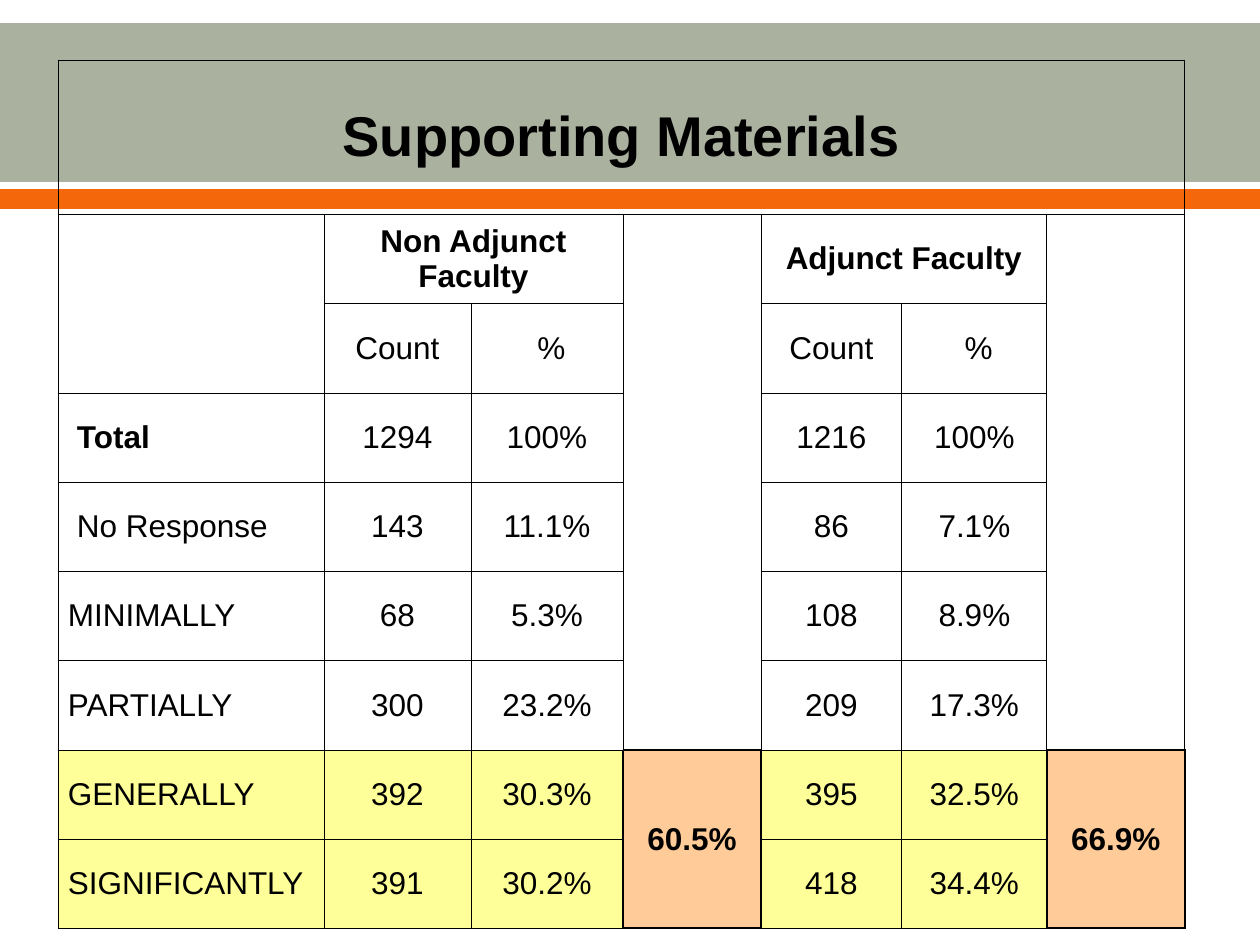
from lxml.etree import SubElement as Sub
from pptx import Presentation
from pptx.dml.color import RGBColor as RGB
from pptx.enum.shapes import MSO_SHAPE as Shape
from pptx.enum.text import MSO_ANCHOR as Anchor, PP_ALIGN as Align
from pptx.oxml.ns import qn
from pptx.util import Pt

SCALE = 914400 / 126  # EMU in one px
SAGE = RGB(0xAB, 0xB1, 0x9F)
ORANGE = RGB(0xF4, 0x68, 0x0B)
YELLOW = RGB(0xFF, 0xFF, 0x99)
PEACH = RGB(0xFF, 0xCC, 0x99)
BLACK = RGB(0, 0, 0)

COLS = [266, 147, 152, 138, 141, 145, 138]
ROWS = [154] + [89, 90, 89, 89] * 2
GAPS = (3, 6)  # columns that hold only the sums
TOP = 7  # first of the two highlighted rows
SPANS = [(0, 0, 0, 6), (1, 1, 1, 2), (1, 4, 1, 5), (7, 3, 8, 3), (7, 6, 8, 6)]
DATA = [
    ["Supporting Materials"] + [""] * 6,
    ["", "Non Adjunct Faculty", "", "", "Adjunct Faculty", "", ""],
    ["", "Count", " %", "", "Count", " %", ""],
    ["Total", "1294", "100%", "", "1216", "100%", ""],
    ["No Response", "143", "11.1%", "", "86", "7.1%", ""],
    ["MINIMALLY", "68", "5.3%", "", "108", "8.9%", ""],
    ["PARTIALLY", "300", "23.2%", "", "209", "17.3%", ""],
    ["GENERALLY", "392", "30.3%", "60.5%", "395", "32.5%", "66.9%"],
    ["SIGNIFICANTLY", "391", "30.2%", "", "418", "34.4%", ""],
]


def px(n):
    return round(n * SCALE)


def edges(row, col):
    """Line width in points for each side of a cell; 0 is no line."""
    side = dict.fromkeys("LRTB", 0.5)
    if row >= TOP:
        if col in GAPS:
            side = dict.fromkeys("LRTB", 1)
        elif col + 1 in GAPS:
            side["R"] = 1
        elif col - 1 in GAPS:
            side["L"] = 1
    elif row and col in GAPS:
        side["T"] = 0.5 if row == 1 else 0
        side["B"] = 1 if row == TOP - 1 else 0
    elif col == 0 and row in (1, 2):
        side["B" if row == 1 else "T"] = 0
    return side


class Deck:
    def __init__(self, wide, high, font):
        self.font = font
        self.prs = Presentation()
        self.prs.slide_width, self.prs.slide_height = px(wide), px(high)
        self.slide = self.prs.slides.add_slide(self.prs.slide_layouts[6])

    def band(self, top, high, color):
        box = self.slide.shapes.add_shape(
            Shape.RECTANGLE, 0, px(top), self.prs.slide_width, px(high))
        box.shadow.inherit = False
        box.fill.solid()
        box.fill.fore_color.rgb = color
        box.line.fill.background()

    def border(self, cell, sides):
        props = cell._tc.get_or_add_tcPr()
        for side, width in sides.items():
            line = Sub(props, qn("a:ln" + side), w=str(Pt(width)))
            if width:
                fill = Sub(line, qn("a:solidFill"))
                Sub(fill, qn("a:srgbClr"), val=str(BLACK))
            else:
                Sub(line, qn("a:noFill"))

    def cell(self, cell, text, size, bold, align, indent, fill, sides):
        self.border(cell, sides)
        form = {"vertical_anchor": Anchor.MIDDLE, "margin_left": px(indent),
                "margin_right": px(1), "margin_top": px(1), "margin_bottom": 0}
        for name, value in form.items():
            setattr(cell, name, value)
        if fill is None:
            cell.fill.background()
        else:
            cell.fill.solid()
            cell.fill.fore_color.rgb = fill
        if text:
            para = cell.text_frame.paragraphs[0]
            para.alignment = align
            run = para.add_run()
            run.text = text
            style = {"name": self.font, "size": Pt(size), "bold": bold}
            for name, value in style.items():
                setattr(run.font, name, value)
            run.font.color.rgb = BLACK

    def table(self, left, top, cols, rows):
        grid = self.slide.shapes.add_table(
            len(rows), len(cols), px(left), px(top),
            px(sum(cols)), px(sum(rows))).table
        grid.first_row = grid.horz_banding = False
        for col, wide in zip(grid.columns, cols):
            col.width = px(wide)
        for row, high in zip(grid.rows, rows):
            row.height = px(high)
        return grid

    def save(self):
        self.prs.save("out.pptx")


def main():
    deck = Deck(1260, 945, "Arial")

    # Bands behind the title
    deck.band(23, 159, SAGE)
    deck.band(189, 20, ORANGE)

    # Survey table
    grid = deck.table(58, 60, COLS, ROWS)
    for row, line in enumerate(DATA):
        for col, text in enumerate(line):
            label = col == 0 and row > 0
            indent = (19 if row in (3, 4) else 10) if label else 1
            fill = None
            if row >= TOP:
                fill = PEACH if col in GAPS else YELLOW
            deck.cell(grid.cell(row, col), text,
                      size=18 if row else 32,
                      bold=row < 2 or col in GAPS or text == "Total",
                      align=Align.LEFT if label else Align.CENTER,
                      indent=indent, fill=fill, sides=edges(row, col))

    # Headings and sums that span cells
    for top, left, low, right in SPANS:
        grid.cell(top, left).merge(grid.cell(low, right))

    deck.save()


if __name__ == "__main__":
    main()
